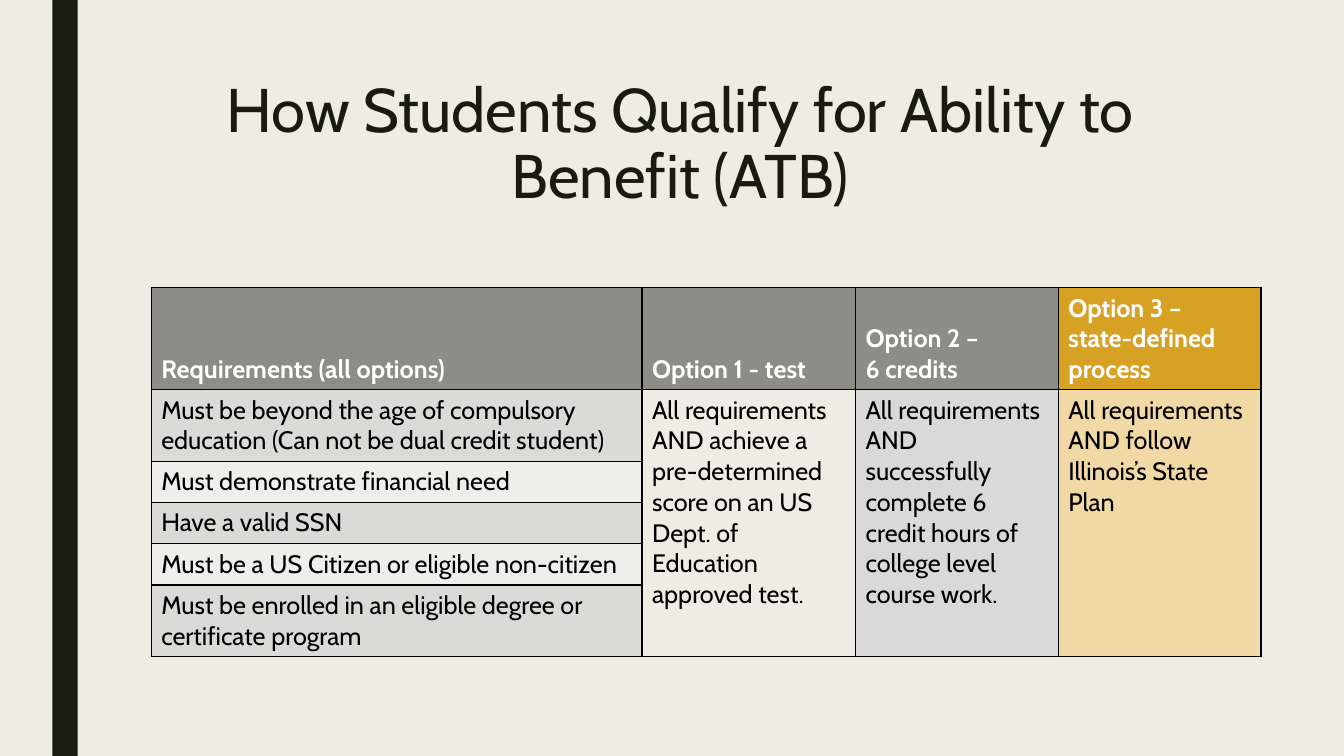
from lxml.etree import SubElement
from pptx import Presentation
from pptx.dml.color import RGBColor
from pptx.enum.shapes import MSO_SHAPE
from pptx.enum.text import MSO_ANCHOR as ANCHOR, PP_ALIGN as ALIGN
from pptx.oxml.ns import qn
from pptx.util import Cm, Pt

FONT = "Cabin"
DARK = "191B0E"
GREY = "8C8D86"
GOLD = "D7A124"
BANDS = ["DADBD9", "EEEEED"]

COL_WIDTHS = [12.37, 5.38, 5.11, 5.11]
ROW_HEIGHTS = [2.57, 1.8, 1.04, 1.04, 1.04, 1.8]
HEADERS = [
    ("Requirements (all options)", GREY),
    ("Option 1 - test", GREY),
    ("Option 2 –\n6 credits", GREY),
    ("Option 3 – state-defined process", GOLD),
]
REQUIREMENTS = [
    "Must be beyond the age of compulsory education (Can not be dual credit student)",
    "Must demonstrate financial need",
    "Have a valid SSN",
    "Must be a US Citizen or eligible non-citizen",
    "Must be enrolled in an eligible degree or certificate program",
]
OPTIONS = [
    ("All requirements AND achieve a pre-determined score on an US Dept. of Education approved test.", None),
    ("All requirements AND successfully complete 6 credit hours of college level course work.", "D9D9D9"),
    ("All requirements AND follow Illinois’s State Plan", "F0D9A5"),
]


def rgb(color):
    return RGBColor.from_string(color)


def style_text(tf, size, color, bold=False):
    for p in tf.paragraphs:
        for r in p.runs:
            r.font.name = FONT
            r.font.size = Pt(size)
            r.font.bold = bold
            r.font.color.rgb = rgb(color)


def add_side_bar(slide, x, y, w, h):
    sp = slide.shapes.add_shape(MSO_SHAPE.RECTANGLE, Cm(x), Cm(y), Cm(w), Cm(h))
    sp.shadow.inherit = False
    sp.fill.solid()
    sp.fill.fore_color.rgb = rgb(DARK)
    sp.line.fill.background()


def add_title(slide, x, y, w, h, text):
    tf = slide.shapes.add_textbox(Cm(x), Cm(y), Cm(w), Cm(h)).text_frame
    tf.word_wrap = True
    tf.vertical_anchor = ANCHOR.TOP
    tf.text = text
    p = tf.paragraphs[0]
    p.alignment = ALIGN.CENTER
    p.line_spacing = 0.89
    style_text(tf, 44, DARK)


def style_cell(cell, fill):
    if fill:
        cell.fill.solid()
        cell.fill.fore_color.rgb = rgb(fill)
    else:
        cell.fill.background()
    tcPr = cell._tc.get_or_add_tcPr()
    for i, side in enumerate(["L", "R", "T", "B"]):
        ln = SubElement(tcPr, qn(f"a:ln{side}"), w=str(Pt(1)))
        solid = SubElement(ln, qn("a:solidFill"))
        SubElement(solid, qn("a:srgbClr"), val="000000")
        tcPr.insert(i, ln)


def write_cell(cell, text, color="000000", bold=False):
    cell.text_frame.text = text
    style_text(cell.text_frame, 18, color, bold)


def add_options_table(slide, x, y):
    frame = slide.shapes.add_table(
        len(ROW_HEIGHTS), len(COL_WIDTHS), Cm(x), Cm(y),
        Cm(sum(COL_WIDTHS)), Cm(sum(ROW_HEIGHTS)))
    table = frame.table
    table.first_row = False
    table.horz_banding = False
    for col, width in zip(table.columns, COL_WIDTHS):
        col.width = Cm(width)
    for row, height in zip(table.rows, ROW_HEIGHTS):
        row.height = Cm(height)

    for c, (text, fill) in enumerate(HEADERS):
        cell = table.cell(0, c)
        cell.vertical_anchor = ANCHOR.BOTTOM
        style_cell(cell, fill)
        write_cell(cell, text, "FFFFFF", True)

    last = len(REQUIREMENTS)
    for i, text in enumerate(REQUIREMENTS):
        cell = table.cell(i + 1, 0)
        style_cell(cell, BANDS[i % 2])
        write_cell(cell, text)

    for c, (text, fill) in enumerate(OPTIONS, 1):
        for i in range(1, last + 1):
            style_cell(table.cell(i, c), fill)
        table.cell(1, c).merge(table.cell(last, c))
        write_cell(table.cell(1, c), text)


def main():
    prs = Presentation()
    prs.slide_width, prs.slide_height = Cm(33.87), Cm(19.05)
    s = prs.slides.add_slide(prs.slide_layouts[6])
    s.background.fill.solid()
    s.background.fill.fore_color.rgb = rgb("EFEDE3")
    add_side_bar(s, 1.32, 0, 0.64, 19.05)
    add_title(s, 3.81, 1.9, 26.67, 4.11,
              "How Students Qualify for Ability to Benefit (ATB)")
    add_options_table(s, 3.81, 7.25)
    prs.save("out.pptx")


if __name__ == "__main__":
    main()
